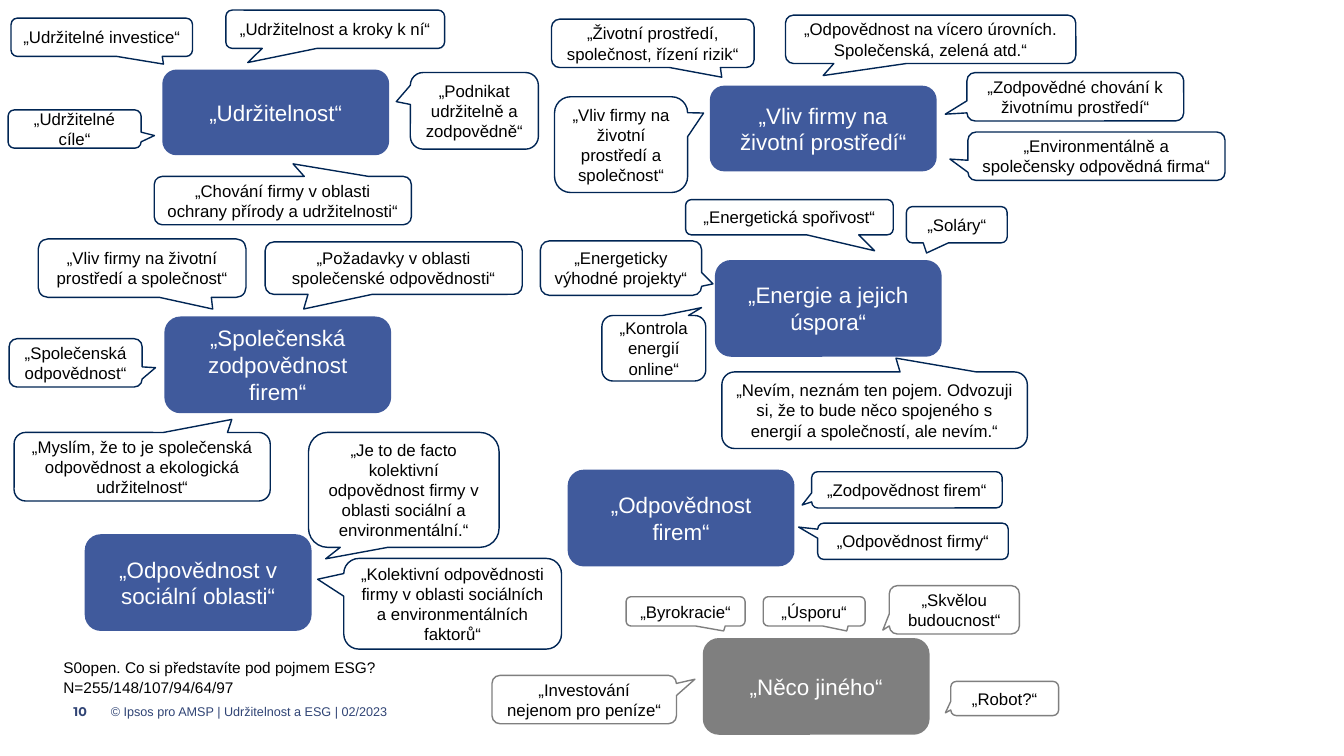
from pptx import Presentation
from pptx import util as u
from pptx.dml.color import RGBColor
from pptx.enum import shapes, text

FONT = "Arial"
BLUE, NAVY, GREY = "405A9C", "002554", "7F7F7F"
BLACK, WHITE, FOOTER = "000000", "FFFFFF", "304475"
TOPIC_WIDTH = 2.25

# Each topic: label, (left, top, height), fill, outline of quotes, quotes.
# Each quote: text, (left, top) from the topic corner, (width, height), tip of the callout.
TOPICS = [
    ("„Udržitelnost“", (1.61, 0.69, 0.85), BLUE, NAVY, [
        ("„Udržitelné cíle“", (-1.53, 0.4), (1.32, 0.38), (0.6, 0.17)),
        ("„Udržitelné investice“", (-1.5, -0.51), (1.8, 0.38), (0.34, 0.7)),
        ("„Udržitelnost a kroky k ní“", (0.63, -0.59), (2.17, 0.38), (-0.4, 0.87)),
        ("„Chování firmy v oblasti ochrany přírody a udržitelnosti“",
         (-0.08, 1.06), (2.55, 0.48), (0.04, -0.76)),
        ("„Podnikat udržitelně a zodpovědně“", (2.46, 0.03), (1.27, 0.76), (-0.61, -0.12)),
    ]),
    ("„Vliv firmy na životní prostředí“", (7.04, 0.85, 0.85), BLUE, NAVY, [
        ("„Vliv firmy na životní prostředí a společnost“",
         (-1.54, 0.11), (1.32, 0.95), (0.62, -0.33)),
        ("„Životní prostředí, společnost, řízení rizik“",
         (-1.57, -0.66), (2.01, 0.48), (0.34, 0.7)),
        ("„Odpovědnost na vícero úrovních. Společenská, zelená atd.“",
         (0.75, -0.7), (2.88, 0.48), (-0.37, 0.75)),
        ("„Environmentálně a společensky odpovědná firma“",
         (2.56, 0.46), (2.55, 0.48), (-0.57, 0.06)),
        ("„Zodpovědné chování k životnímu prostředí“",
         (2.55, -0.13), (2.15, 0.48), (-0.6, 0.36)),
    ]),
    ("„Společenská zodpovědnost firem“", (1.63, 3.14, 0.96), BLUE, NAVY, [
        ("„Vliv firmy na životní prostředí a společnost“",
         (-1.25, -0.77), (2.06, 0.58), (0.34, 0.7)),
        ("„Společenská odpovědnost“", (-1.54, 0.22), (1.32, 0.48), (0.6, 0.1)),
        ("„Myslím, že to je společenská odpovědnost a ekologická udržitelnost“",
         (-1.49, 1.15), (2.54, 0.68), (0.35, -0.69)),
        ("„Požadavky v oblasti společenské odpovědnosti“",
         (1, -0.74), (2.55, 0.52), (-0.35, 0.78)),
    ]),
    ("„Energie a jejich úspora“", (7.09, 2.58, 0.96), BLUE, NAVY, [
        ("„Nevím, neznám ten pojem. Odvozuji si, že to bude něco spojeného "
         "s energií a společností, ale nevím.“", (0.07, 1.11), (3.03, 0.76), (0.07, -0.68)),
        ("„Kontrola energií online“", (-1.12, 0.55), (1.03, 0.65), (0.46, -0.62)),
        ("„Energeticky výhodné projekty“", (-1.73, -0.19), (1.6, 0.54), (0.57, 0.29)),
        ("„Energetická spořivost“", (-0.29, -0.6), (2.06, 0.35), (0.41, 0.95)),
        ("„Soláry“", (1.9, -0.53), (1, 0.36), (-0.3, 0.78)),
    ]),
    ("„Odpovědnost firem“", (5.63, 4.66, 0.96), BLUE, NAVY, [
        ("„Zodpovědnost firem“", (2.42, 0.02), (1.89, 0.36), (-0.55, 0.42)),
        ("„Odpovědnost firmy“", (2.48, 0.53), (1.89, 0.36), (-0.6, -0.39)),
    ]),
    ("„Odpovědnost v sociální oblasti“", (0.84, 5.3, 0.96), BLUE, NAVY, [
        ("„Je to de facto kolektivní odpovědnost firmy v oblasti sociální a environmentální.“",
         (2.22, -1.01), (1.89, 1.14), (-0.41, 0.6)),
        ("„Kolektivní odpovědnosti firmy v oblasti sociálních a environmentálních faktorů“",
         (2.57, 0.24), (2.16, 0.9), (-0.62, -0.27)),
    ]),
    ("„Něco jiného“", (6.97, 6.33, 0.96), GREY, GREY, [
        ("„Skvělou budoucnost“", (1.85, -0.52), (1.29, 0.48), (-0.55, 0.42)),
        ("„Úsporu“", (0.6, -0.41), (1.01, 0.29), (0.32, 0.67)),
        ("„Byrokracie“", (-0.76, -0.41), (1.18, 0.29), (0.32, 0.67)),
        ("„Investování nejenom pro peníze“", (-2.09, 0.37), (1.83, 0.48), (0.6, -0.42)),
        ("„Robot?“", (2.46, 0.43), (1.07, 0.34), (-0.55, 0.42)),
    ]),
]


def color(value):
    return RGBColor.from_string(value)


def write(shape, words, size, ink, centred=True, font=FONT, bold=False):
    """Fill a shape with one formatted paragraph and return it."""
    frame = shape.text_frame
    frame.word_wrap = True
    frame.vertical_anchor = text.MSO_ANCHOR.MIDDLE
    para = frame.paragraphs[0]
    para.text = words
    para.alignment = text.PP_ALIGN.CENTER if centred else text.PP_ALIGN.LEFT
    for span in para.runs:
        span.font.name = font
        span.font.size = u.Pt(size)
        span.font.bold = bold
        span.font.color.rgb = color(ink)
    return para


def add_shape(page, kind, box):
    shape = page.shapes.add_shape(kind, *map(u.Inches, box))
    shape.shadow.inherit = False
    return shape


def add_quote(page, words, box, tip, outline):
    quote = add_shape(page, shapes.MSO_SHAPE.ROUNDED_RECTANGULAR_CALLOUT, box)
    quote.adjustments[0], quote.adjustments[1] = tip
    quote.fill.background()
    quote.line.color.rgb = color(outline)
    quote.line.width = u.Pt(1)
    write(quote, words, 12, BLACK)


def add_topic(page, label, box, fill, outline, quotes):
    """Place a topic and the quotes around it."""
    left, top, height = box
    topic = add_shape(page, shapes.MSO_SHAPE.ROUNDED_RECTANGLE,
                      (left, top, TOPIC_WIDTH, height))
    topic.fill.solid()
    topic.fill.fore_color.rgb = color(fill)
    topic.line.fill.background()
    write(topic, label, 16, WHITE)
    for words, (across, down), size, tip in quotes:
        add_quote(page, words, (left + across, top + down, *size), tip, outline)


def add_footer(page, left, top):
    """Place the survey question, page number and copyright line."""
    question = page.shapes.add_textbox(*map(u.Inches, (left, top, 11.36, 0.48)))
    para = write(question, "S0open. Co si představíte pod pojmem ESG?\nN=255/148/107/94/64/97",
                 11, BLACK, centred=False)
    para.line_spacing = u.Pt(14)
    question.text_frame.vertical_anchor = text.MSO_ANCHOR.TOP

    number = page.shapes.add_textbox(*map(u.Inches, (left + 0.07, top + 0.39, 0.39, 0.4)))
    write(number, "10", 9, FOOTER, font="Montserrat", bold=True)
    rights = page.shapes.add_textbox(*map(u.Inches, (left + 0.57, top + 0.39, 10.07, 0.4)))
    write(rights, "© Ipsos pro AMSP | Udržitelnost a ESG | 02/2023", 9, FOOTER, centred=False)
    for box in (number, rights):
        box.text_frame.margin_left = box.text_frame.margin_right = 0


def main():
    deck = Presentation()
    deck.slide_width, deck.slide_height = u.Inches(13.33), u.Inches(7.5)
    page = deck.slides.add_slide(deck.slide_layouts[6])
    add_footer(page, 0.53, 6.47)
    for topic in TOPICS:
        add_topic(page, *topic)
    deck.save("out.pptx")


if __name__ == "__main__":
    main()
